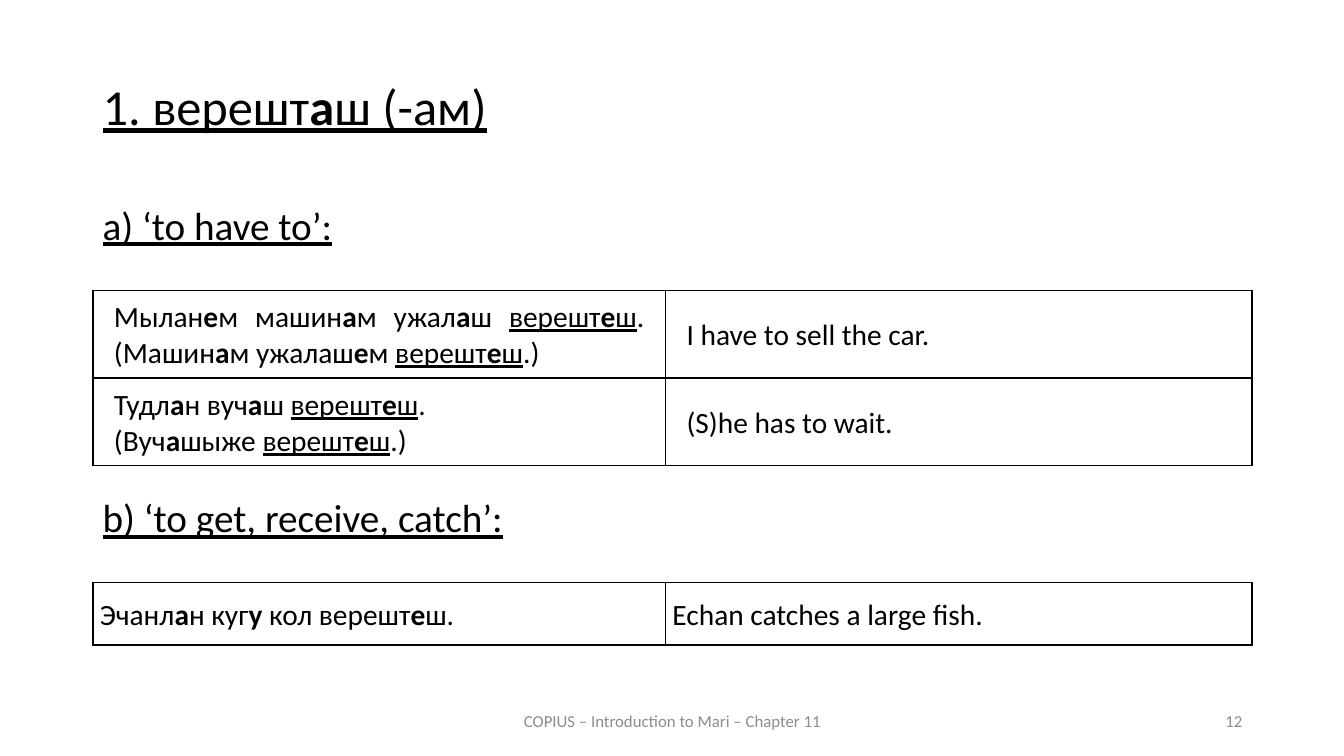
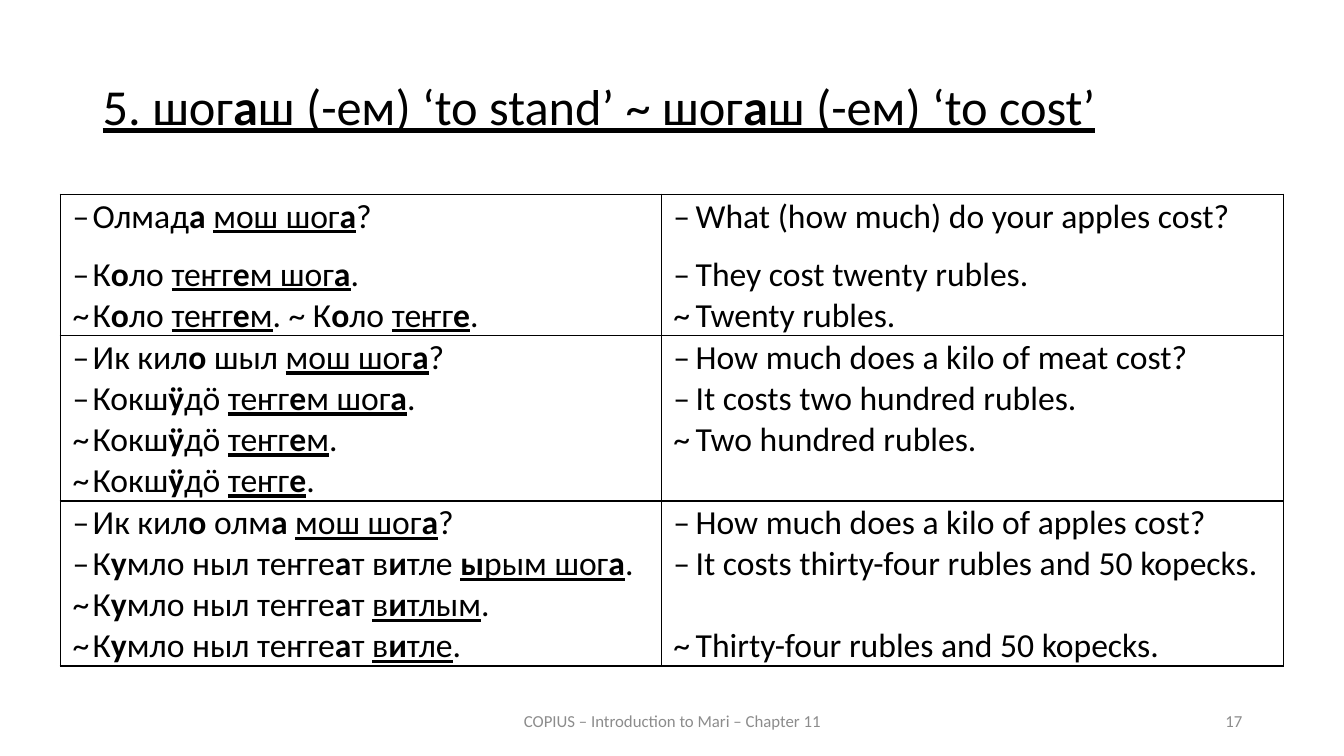
from lxml.etree import SubElement
from pptx import Presentation
from pptx.dml.color import RGBColor
from pptx.enum.text import MSO_ANCHOR, PP_ALIGN
from pptx.oxml.ns import qn
from pptx.util import Inches, Pt

FONT = "Calibri"
BLACK, GRAY = "000000", "8C8C8C"
FOOTER = "COPIUS – Introduction to Mari – Chapter 11"
LEFT, WIDTH = 0.92, 11.5
MID, TOP = MSO_ANCHOR.MIDDLE, MSO_ANCHOR.TOP
JUST = PP_ALIGN.JUSTIFY


def color(code):
    return RGBColor.from_string(code)


def write(frame, lines, size, tint=BLACK, align=None, anchor=TOP,
          space=None, before=None, after=None, hang=0):
    """Fill a frame; * switches bold and _ switches underline.

    before and after map a line's index to its spacing in points.
    """
    frame.word_wrap = True
    frame.vertical_anchor = anchor
    for num, text in enumerate(lines):
        para = frame.add_paragraph() if num else frame.paragraphs[0]
        para.alignment = align
        para.line_spacing = space
        para.space_before = Pt((before or {}).get(num, 0))
        para.space_after = Pt((after or {}).get(num, 0))
        if hang:
            props = para._p.get_or_add_pPr()
            props.set("marL", str(Inches(hang)))
            props.set("indent", str(-Inches(hang)))
        under = False
        for i, part in enumerate(text.split("*")):
            for j, bit in enumerate(part.split("_")):
                under ^= j > 0
                for k, piece in enumerate(bit.split("\n")):
                    if k:
                        para.add_line_break()
                    if not piece:
                        continue
                    run = para.add_run()
                    run.text = piece
                    font = run.font
                    font.name, font.size = FONT, Pt(size)
                    font.bold, font.underline = i % 2 == 1, under
                    font.color.rgb = color(tint)


def label(slide, box, text, size, **style):
    shape = slide.shapes.add_textbox(*map(Inches, box))
    write(shape.text_frame, [text], size, **style)


def edge(cell, side, width):
    line = SubElement(cell._tc.get_or_add_tcPr(), qn("a:ln" + side),
                      w=str(Pt(width)))
    fill = SubElement(line, qn("a:solidFill"))
    SubElement(fill, qn("a:srgbClr"), val=BLACK)


def grid(slide, left, top, cols, rows, cells, size, pad, ends=1,
         hangs=(0, 0), **style):
    """Two-column table; a cell is a list of lines or (lines, spacing)."""
    box = map(Inches, (left, top, sum(cols), sum(rows)))
    table = slide.shapes.add_table(len(rows), len(cols), *box).table
    table.first_row = table.horz_banding = False
    for col, width in zip(table.columns, cols):
        col.width = Inches(width)
    last = len(rows) - 1
    for r, height in enumerate(rows):
        table.rows[r].height = Inches(height)
        for c, hang in enumerate(hangs):
            cell = table.cell(r, c)
            cell.margin_left = cell.margin_right = Inches(pad[0])
            cell.margin_top, cell.margin_bottom = Inches(pad[1]), 0
            edge(cell, "L", 1 if c else 1.5)
            edge(cell, "R", 1.5 if c else 1)
            edge(cell, "T", 1 if r else ends)
            edge(cell, "B", ends if r == last else 1)
            cell.fill.background()
            item = cells[r][c]
            lines, gaps = item if isinstance(item, tuple) else (item, {})
            write(cell.text_frame, lines, size, hang=hang, **gaps, **style)
            cell.vertical_anchor = style.get("anchor", TOP)


def page(deck, title, number):
    """New slide with its title and footer."""
    slide = deck.slides.add_slide(deck.slide_layouts[6])
    label(slide, (LEFT, 0.76, WIDTH, 0.99), title, 36,
          align=JUST, space=0.9, before={0: 12})
    foot = {"tint": GRAY, "anchor": MID}
    label(slide, (4.42, 6.95, 4.5, 0.4), FOOTER, 12,
          align=PP_ALIGN.CENTER, **foot)
    label(slide, (9.42, 6.95, 3, 0.4), number, 12,
          align=PP_ALIGN.RIGHT, **foot)
    return slide


def sense(slide, top, head, rows, cells, **style):
    """Heading of one meaning with its examples below."""
    label(slide, (LEFT, top, WIDTH, 0.7), head, 28,
          space=0.9, before={0: 10})
    grid(slide, LEFT, top + 0.88, (5.68, 5.82), rows, cells, 21,
         anchor=MID, **style)


def have(deck):
    slide = page(deck, "_1. верешт*а*ш (-ам)_", "12")
    sense(slide, 2, "_a) ‘to have to’:_", (0.87, 0.87), [
        (["Мылан*е*м машин*а*м ужал*а*ш _верешт*е*ш_.\n"
          "(Машин*а*м ужалаш*е*м _верешт*е*ш_.)"],
         ["I have to sell the car."]),
        (["Тудл*а*н вуч*а*ш _верешт*е*ш_.",
          "(Вуч*а*шыже _верешт*е*ш_.)"],
         ["(S)he has to wait."]),
    ], pad=(0.21, 0.03), align=JUST)
    sense(slide, 4.9, "_b) ‘to get, receive, catch’:_", (0.62,), [
        (["Эчанл*а*н куг*у *кол верешт*е*ш."],
         ["Echan catches a large fish."]),
    ], pad=(0.07, 0), space=1.07)


def cost(deck):
    slide = page(
        deck, "_5. шог*а*ш (-ем) ‘to stand’ ~ шог*а*ш (-ем) ‘to cost’_", "17")
    gap = {"after": {0: 12}}
    skip = {"before": {2: 29.3}}  # keeps the reply level with its pair
    grid(slide, 0.6, 1.93, (5.96, 6.17), (1.4, 1.64, 1.64), [
        ((["–\tОлмад*а *_мош шог*а*_?",
           "–\tК*о*ло _теҥг*е*м шог*а*_.",
           "~\tК*о*ло _теҥг*е*м_. ~ К*о*ло _теҥг*е*_."], gap),
         (["–\tWhat (how much) do your apples cost?",
           "–\tThey cost twenty rubles.",
           "~\tTwenty rubles."], gap)),
        (["–\tИк кил*о *шыл _мош шог*а*_?",
          "–\tКокш*ӱ*дӧ _теҥг*е*м шог*а*_.",
          "~\tКокш*ӱ*дӧ _теҥг*е*м_.",
          "~\tКокш*ӱ*дӧ _теҥг*е*_."],
         ["–\tHow much does a kilo of meat cost?",
          "–\tIt costs two hundred rubles.",
          "~\tTwo hundred rubles."]),
        (["–\tИк кил*о* олм*а *_мош шог*а*_?",
          "–\tК*у*мло ныл теҥге*а*т в*и*тле _*ы*рым шог*а*_.",
          "~\tК*у*мло ныл теҥге*а*т _в*и*тлым_.",
          "~\tК*у*мло ныл теҥге*а*т _в*и*тле_."],
         (["–\tHow much does a kilo of apples cost?",
           "–\tIt costs thirty-four rubles and 50 kopecks.",
           "~\tThirty-four rubles and 50 kopecks."], skip)),
    ], 24, pad=(0.12, 0.02), ends=1.5, hangs=(0.2, 0.22))


def main():
    deck = Presentation()
    deck.slide_width, deck.slide_height = Inches(13.33), Inches(7.5)
    have(deck)
    cost(deck)
    deck.save("out.pptx")


if __name__ == "__main__":
    main()
